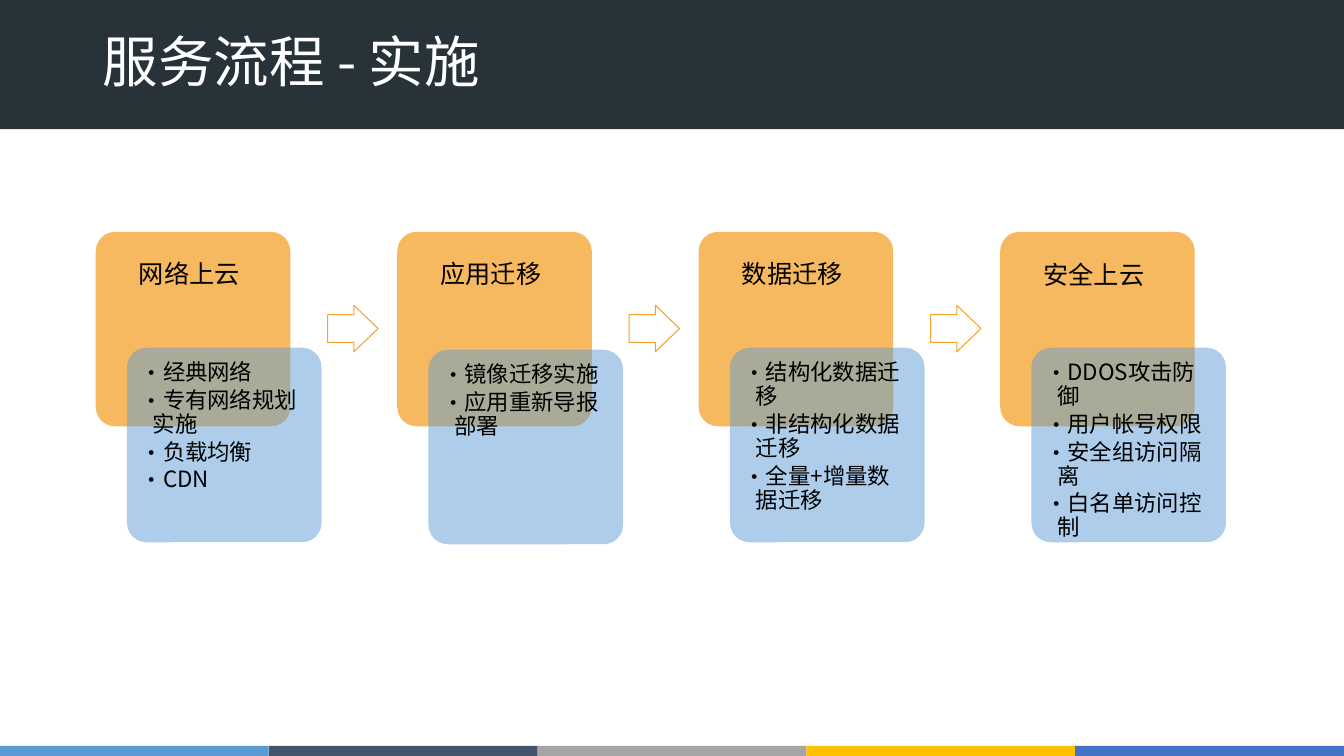
from dataclasses import dataclass

from lxml.etree import SubElement
from pptx import Presentation
from pptx.dml.color import RGBColor
from pptx.enum.shapes import MSO_SHAPE as Shape
from pptx.enum.text import MSO_ANCHOR as Anchor, MSO_AUTO_SIZE as AutoSize, PP_ALIGN as Align
from pptx.oxml.ns import qn
from pptx.util import Inches, Pt


@dataclass(frozen=True)
class Theme:
    font: str = "Noto Sans CJK SC"
    band: str = "273339"
    orange: str = "F5A22C"
    blue: str = "5B9BD5"
    white: str = "FFFFFF"
    black: str = "000000"
    stripe: tuple = ("5B9BD5", "44546A", "A5A5A5", "FFC000", "4472C4")
    title_size: float = 39.6
    heading_size: float = 18
    list_size: float = 16


theme = Theme()


def write(sp, lines, size, color=theme.black, anchor=Anchor.TOP, inset=(0.1, 0.05, 0.1),
          spacing=None, after=0, bullet=False, wrap=True):
    """Fill a shape with one paragraph per line; inset is left, top, right."""
    tf = sp.text_frame
    tf.auto_size, tf.word_wrap, tf.vertical_anchor = AutoSize.NONE, wrap, anchor
    tf.margin_left, tf.margin_top, tf.margin_right = map(Inches, inset)
    tf.margin_bottom = tf.margin_top
    for i, line in enumerate(lines):
        p = tf.add_paragraph() if i else tf.paragraphs[0]
        p.alignment, p.line_spacing, p.space_after = Align.LEFT, spacing, Pt(after)
        if bullet:
            pPr = p._p.get_or_add_pPr()
            pPr.set("marL", str(Inches(0.12)))
            pPr.set("indent", str(-Inches(0.12)))
            SubElement(pPr, qn("a:buFont"), typeface=theme.font)
            SubElement(pPr, qn("a:buChar"), char="•")
        r = p.add_run()
        r.text = line
        r.font.size, r.font.name = Pt(size), theme.font
        r.font.color.rgb = RGBColor.from_string(color)
        SubElement(r.font._element, qn("a:ea"), typeface=theme.font)


def block(kind, x, y, w, h, fill=None, alpha=100, line=None, adjust=()):
    """Add a preset shape with a flat fill or an outline."""
    sp = s.shapes.add_shape(kind, Inches(x), Inches(y), Inches(w), Inches(h))
    sp.shadow.inherit = False
    for i, value in enumerate(adjust):
        sp.adjustments[i] = value
    if fill:
        sp.fill.solid()
        sp.fill.fore_color.rgb = RGBColor.from_string(fill)
        if alpha < 100:
            clr = sp.fill._xPr.find(qn("a:solidFill"))[0]
            SubElement(clr, qn("a:alpha"), val=str(alpha * 1000))
    else:
        sp.fill.background()
    if line:
        sp.line.color.rgb = RGBColor.from_string(line)
        sp.line.width = Pt(0.75)
    else:
        sp.line.fill.background()
    return sp


W, H = 13.33, 7.5
prs = Presentation()
prs.slide_width, prs.slide_height = Inches(W), Inches(H)
s = prs.slides.add_slide(prs.slide_layouts[5])

# Header band and footer stripe
block(Shape.RECTANGLE, 0, -0.01, W, 1.29, theme.band)
part = W / len(theme.stripe)
for i, color in enumerate(theme.stripe):
    block(Shape.RECTANGLE, i * part, H - 0.1, part, 0.1, color)

# Title, brought in front of the band
title = s.shapes.title
title.left, title.top, title.width, title.height = map(Inches, (0.92, 0.27, 11.5, 0.74))
write(title, ["服务流程 - 实施"], theme.title_size, theme.white, Anchor.MIDDLE, spacing=0.9)
title.element.getparent().append(title.element)

# Steps: heading, its list, and small vertical shifts of list and heading
steps = [
    ("网络上云", ["经典网络", "专有网络规划实施", "负载均衡", "CDN"], 0, 0),
    ("应用迁移", ["镜像迁移实施", "应用重新导报部署"], 0.02, 0),
    ("数据迁移", ["结构化数据迁移", "非结构化数据迁移", "全量+增量数据迁移"], 0, 0),
    ("安全上云", ["DDOS攻击防御", "用户帐号权限", "安全组访问隔离", "白名单访问控制"], 0, 0.01),
]
LEFT, TOP, PITCH, CARD = 0.95, 2.3, 2.99, 1.93

for i, (heading, items, list_shift, heading_shift) in enumerate(steps):
    x = LEFT + i * PITCH
    block(Shape.ROUNDED_RECTANGLE, x, TOP, CARD, CARD, theme.orange, 75, adjust=[0.1])
    card = block(Shape.ROUNDED_RECTANGLE, x + 0.31, TOP + 1.15 + list_shift, CARD, CARD,
                 theme.blue, 49, adjust=[0.1])
    write(card, items, theme.list_size, inset=(0.08, 0.08, 0.07), spacing=0.9, after=2.4,
          bullet=True)
    if i < len(steps) - 1:
        block(Shape.RIGHT_ARROW, x + 2.3, TOP + 0.73, 0.5, 0.46,
              line=theme.orange, adjust=[0.6, 0.52])
    box = s.shapes.add_textbox(Inches(x + 0.33), Inches(TOP + 0.21 + heading_shift),
                               Inches(1.31), Inches(0.4))
    write(box, [heading], theme.heading_size, wrap=False)

prs.save("out.pptx")
